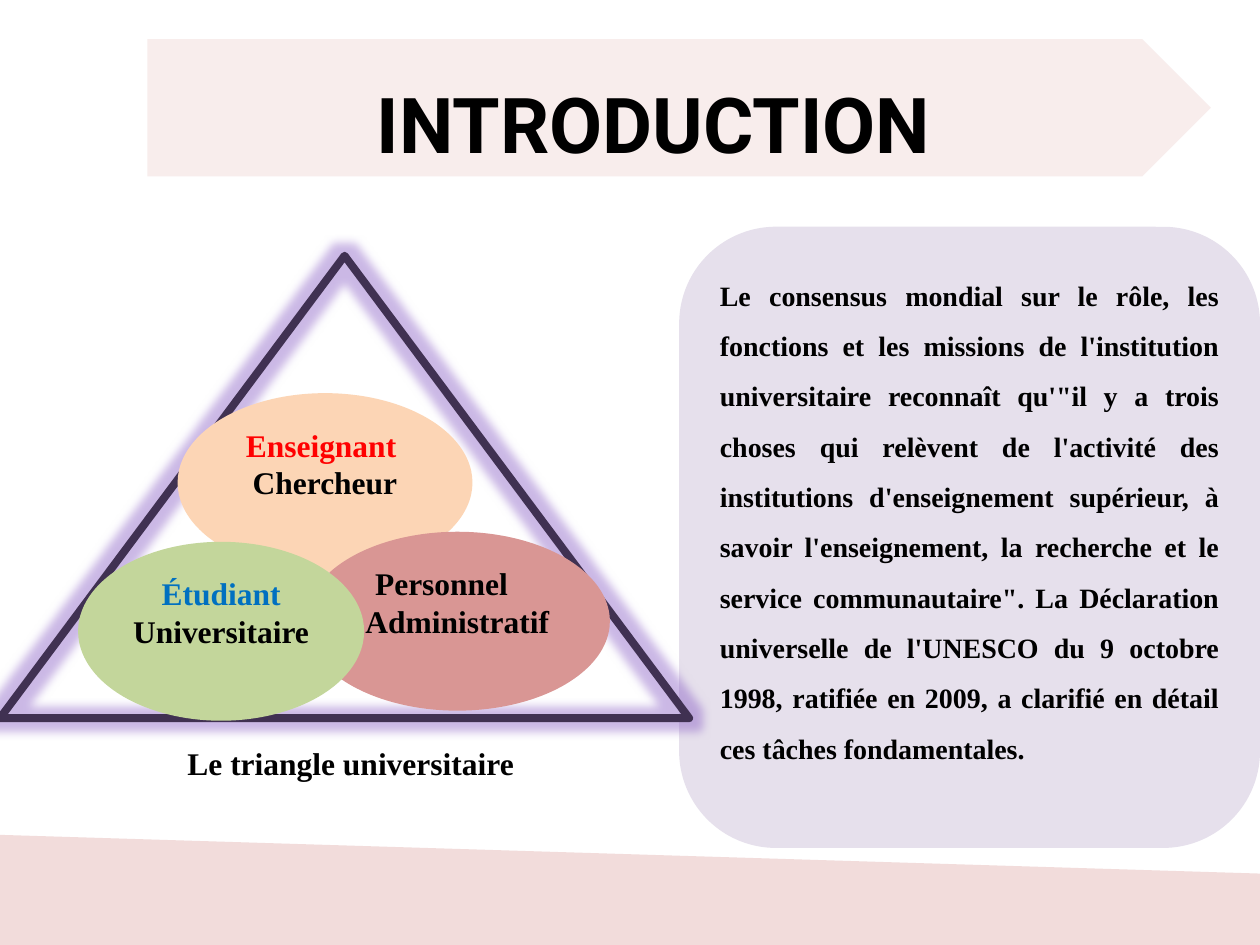
"""Build the introduction slide with the university triangle."""
import dataclasses

import lxml.etree
import pptx
import pptx.dml.color
import pptx.enum.shapes
import pptx.enum.text
import pptx.oxml.ns
import pptx.util

Inches = pptx.util.Inches
Kind = pptx.enum.shapes.MSO_SHAPE
Align = pptx.enum.text.PP_ALIGN
Anchor = pptx.enum.text.MSO_ANCHOR
qn = pptx.oxml.ns.qn
SERIF = "Times New Roman"


@dataclasses.dataclass(frozen=True)
class Role:
    box: tuple[float, float, float, float]
    fill: str
    lines: tuple[tuple[str, str], ...]
    shift: float = 0


ROLES = (
    Role((1.41, 3.12, 2.34, 1.42), "FCD5B5",
         (("Enseignant ", "FF0000"), ("Chercheur", "000000"))),
    Role((2.42, 4.22, 2.42, 1.42), "D99694",
         (("Personnel", "000000"), ("Administratif", "000000")), 0.25),
    Role((0.62, 4.3, 2.27, 1.42), "C3D69B",
         (("Étudiant", "0070C0"), ("Universitaire", "000000"))),
)
BAND = ((0, 6.64), (10.08, 6.95), (10.02, 7.43), (10, 7.5), (0, 7.5))
BODY = (
    "Le consensus mondial sur le rôle, les fonctions et les missions de "
    "l'institution universitaire reconnaît qu'\"il y a trois choses qui "
    "relèvent de l'activité des institutions d'enseignement supérieur, à "
    "savoir l'enseignement, la recherche et le service communautaire\". "
    "La Déclaration universelle de l'UNESCO du 9 octobre 1998, ratifiée en "
    "2009, a clarifié en détail ces tâches fondamentales. "
)


def color(code: str) -> pptx.dml.color.RGBColor:
    return pptx.dml.color.RGBColor.from_string(code)


def style(shape, fill: str | None = None, line: str | None = None,
          width: float = 1) -> None:
    shape.shadow.inherit = False
    if fill:
        shape.fill.solid()
        shape.fill.fore_color.rgb = color(fill)
    else:
        shape.fill.background()
    if line:
        shape.line.color.rgb = color(line)
        shape.line.width = pptx.util.Pt(width)
    else:
        shape.line.fill.background()


def draw(slide, kind, box: tuple[float, float, float, float], **look):
    shape = slide.shapes.add_shape(kind, *map(Inches, box))
    style(shape, **look)
    return shape


def write(shape, text: str, *, size: float = 18, font: str = SERIF,
          ink: str = "000000", align=Align.CENTER, space: float = 1,
          anchor=Anchor.TOP, more: bool = False, right: float = 0) -> None:
    frame = shape.text_frame
    frame.word_wrap = True
    frame.vertical_anchor = anchor
    para = frame.add_paragraph() if more else frame.paragraphs[0]
    para.alignment = align
    para.line_spacing = space
    para._p.get_or_add_pPr().set("marR", str(Inches(right)))
    run = para.add_run()
    run.text = text
    run.font.size = pptx.util.Pt(size)
    run.font.name = font
    run.font.bold = True
    run.font.color.rgb = color(ink)


def glow(shape, code: str, size: float, alpha: int) -> None:
    effect = shape.element.spPr.find(qn("a:effectLst"))
    halo = lxml.etree.SubElement(effect, qn("a:glow"),
                                 rad=str(pptx.util.Pt(size)))
    tint = lxml.etree.SubElement(halo, qn("a:srgbClr"), val=code)
    lxml.etree.SubElement(tint, qn("a:alpha"), val=str(alpha * 1000))


def floor(slide) -> None:
    start, *rest = [(Inches(x), Inches(y)) for x, y in BAND]
    pen = slide.shapes.build_freeform(*start)
    pen.add_line_segments(rest, close=True)
    style(pen.convert_to_shape(), fill="F2DCDB", line="F2DCDB", width=2)


def head(slide) -> None:
    draw(slide, Kind.PENTAGON, (1.17, 0.31, 8.44, 1.09), fill="F8EDEC")
    title = slide.shapes.title
    title.left, title.top, title.width, title.height = map(
        Inches, (0.7, 0.55, 8.98, 0.84))
    title.element.getparent().append(title.element)
    write(title, "INTRODUCTION", size=44, font="Roboto", anchor=Anchor.MIDDLE)


def bubble(slide, role: Role) -> None:
    oval = draw(slide, Kind.OVAL, role.box, fill=role.fill)
    for rank, (text, ink) in enumerate(role.lines):
        write(oval, text, ink=ink, more=rank > 0,
              right=0 if rank else role.shift)


def main() -> None:
    deck = pptx.Presentation()
    deck.slide_width, deck.slide_height = Inches(10), Inches(7.5)
    slide = deck.slides.add_slide(deck.slide_layouts[5])
    floor(slide)
    head(slide)
    panel = draw(slide, Kind.ROUNDED_RECTANGLE, (5.39, 1.8, 4.61, 4.93),
                 fill="E6E0EC")
    write(panel, BODY, size=16, align=Align.JUSTIFY, space=1.5)
    frame = draw(slide, Kind.ISOSCELES_TRIANGLE, (0, 2.03, 5.47, 3.67),
                 line="403152", width=4.5)
    glow(frame, "7E4FC0", 11, 40)
    for role in ROLES:
        bubble(slide, role)
    label = slide.shapes.add_textbox(*map(Inches, (-0.31, 5.86, 6.25, 0.4)))
    write(label, "Le triangle universitaire ")
    deck.save("out.pptx")


if __name__ == "__main__":
    main()
